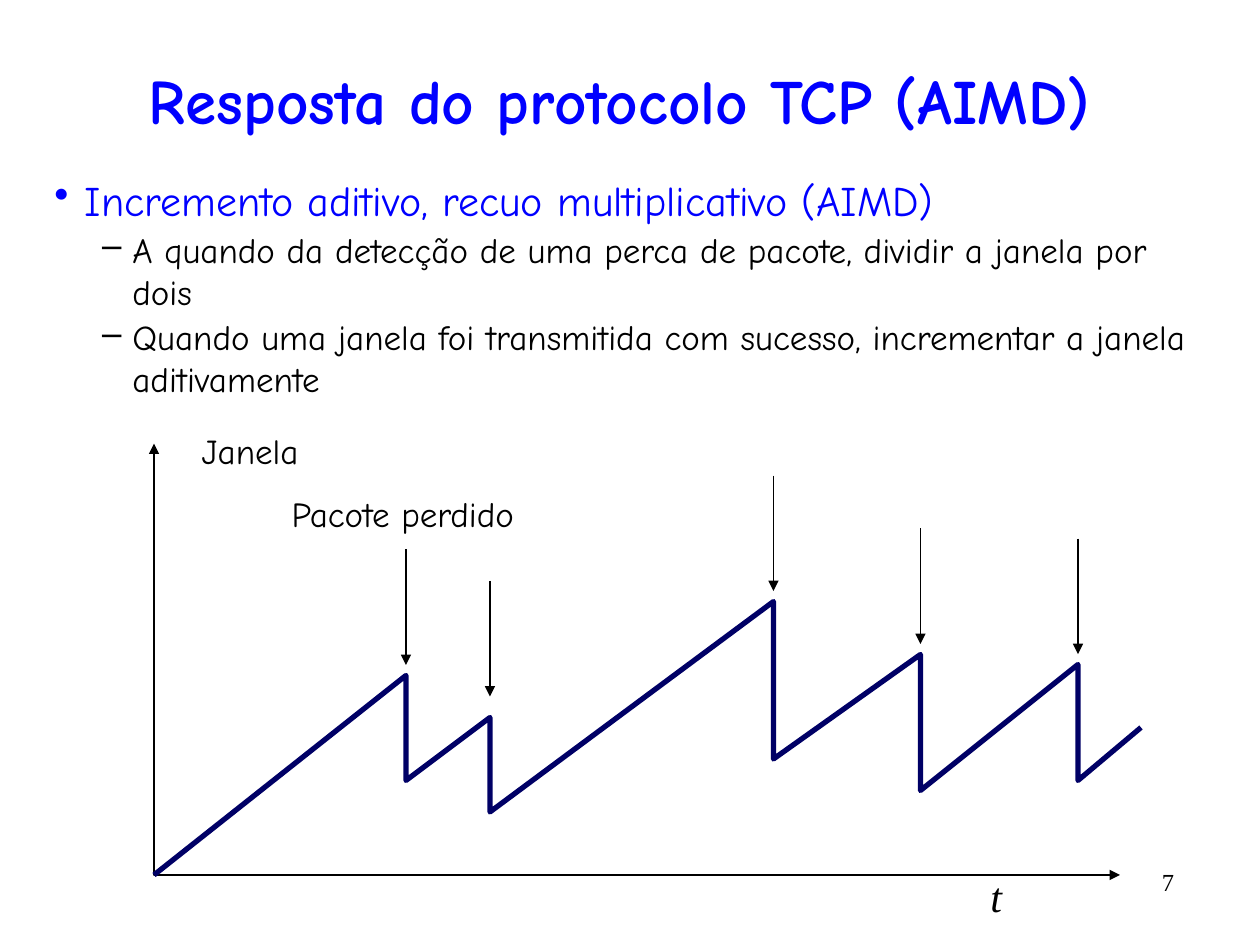
from dataclasses import dataclass

from lxml import etree
from pptx import Presentation
from pptx.dml.color import RGBColor
from pptx.enum.shapes import MSO_CONNECTOR
from pptx.enum.text import MSO_ANCHOR, MSO_AUTO_SIZE, PP_ALIGN
from pptx.oxml.ns import qn
from pptx.util import Pt

STRAIGHT = MSO_CONNECTOR.STRAIGHT
MIDDLE = MSO_ANCHOR.MIDDLE
NO_AUTOFIT = MSO_AUTO_SIZE.NONE
CENTER, RIGHT, LEFT = PP_ALIGN.CENTER, PP_ALIGN.RIGHT, PP_ALIGN.LEFT

BLUE = RGBColor(0x00, 0x00, 0xFF)
NAVY = RGBColor(0x00, 0x00, 0x66)
BLACK = RGBColor(0x00, 0x00, 0x00)

SANS = "Comic Neue"
SERIF = "Times New Roman"

TITLE_ONLY = 5
ARROW_LENGTH = 66


@dataclass(frozen=True)
class Style:
    size: float
    font: str = SANS
    color: RGBColor = BLACK
    bold: bool = False
    italic: bool = False


@dataclass(frozen=True)
class Box:
    left: float
    top: float
    width: float
    height: float

    def lengths(self) -> tuple:
        return Pt(self.left), Pt(self.top), Pt(self.width), Pt(self.height)


@dataclass(frozen=True)
class Label:
    text: str
    box: Box
    style: Style
    align: PP_ALIGN = CENTER
    wrap: bool = False


@dataclass(frozen=True)
class Bullet:
    text: str
    symbol: str
    style: Style
    level: int
    indent: float
    space_before: float


@dataclass(frozen=True)
class Point:
    x: float
    y: float


HEADING = Style(36, color=BLUE, bold=True)
TOPIC = Style(24, color=BLUE)
BODY = Style(20)

HANGING = 17.25
BULLETS = [
    Bullet("Incremento aditivo, recuo multiplicativo (AIMD)", "•", TOPIC, 0, HANGING, 0),
    Bullet("A quando da detecção de uma perca de pacote, dividir a janela por dois",
           "–", BODY, 1, 44.6, 2),
    Bullet("Quando uma janela foi transmitida com sucesso, incrementar a janela "
           "aditivamente", "–", BODY, 1, 44.6, 2),
]

LABELS = [
    Label("7", Box(606, 492, 72, 30), Style(14, SERIF), RIGHT, True),
    Label("t", Box(558.7, 494, 21, 36), Style(24, SERIF, italic=True)),
    Label("Pacote perdido", Box(152.7, 278, 155, 31.5), BODY),
    Label("Janela", Box(105.2, 242, 75.5, 31.5), BODY),
]

ORIGIN = Point(88, 500)
AXES = [Point(ORIGIN.x, 253.5), ORIGIN, Point(640, ORIGIN.y)]

# Each loss: the peak of the window, then the height it falls to
LOSSES = [
    (Point(232, 386), 446),
    (Point(280, 410), 464),
    (Point(442, 343.75), 433.75),
    (Point(526, 374), 451.75),
    (Point(616, 379.75), 446),
]
WINDOW_END = Point(652, 415.75)
ARROW_TOPS = [314, 332, 271.75, 302, 307.75]


def add_run(paragraph, text: str, style: Style) -> None:
    run = paragraph.add_run()
    run.text = text
    font = run.font
    font.name = style.font
    font.size = Pt(style.size)
    font.bold = style.bold
    font.italic = style.italic
    font.color.rgb = style.color


def add_label(slide, label: Label) -> None:
    shape = slide.shapes.add_textbox(*label.box.lengths())
    shape.text_frame.word_wrap = label.wrap
    paragraph = shape.text_frame.paragraphs[0]
    paragraph.alignment = label.align
    add_run(paragraph, label.text, label.style)


def add_bullets(slide, box: Box, bullets: list[Bullet]) -> None:
    frame = slide.shapes.add_textbox(*box.lengths()).text_frame
    frame.word_wrap = True
    for index, bullet in enumerate(bullets):
        paragraph = frame.add_paragraph() if index else frame.paragraphs[0]
        paragraph.alignment = LEFT
        paragraph.level = bullet.level
        paragraph.space_before = Pt(bullet.space_before)
        properties = paragraph._p.get_or_add_pPr()
        properties.set("marL", str(Pt(bullet.indent)))
        properties.set("indent", str(-Pt(HANGING)))
        etree.SubElement(properties, qn("a:buChar"), char=bullet.symbol)
        add_run(paragraph, bullet.text, bullet.style)


def style_line(shape, color: RGBColor, width: float, *arrow_ends: str) -> None:
    """Format the line; arrow_ends takes headEnd before tailEnd."""
    shape.line.color.rgb = color
    shape.line.width = Pt(width)
    line = shape.line._get_or_add_ln()
    for end in arrow_ends:
        etree.SubElement(line, qn(f"a:{end}"), type="triangle")


def add_polyline(slide, points: list[Point], color: RGBColor, width: float,
                 *arrow_ends: str) -> None:
    start, *others = [(Pt(point.x), Pt(point.y)) for point in points]
    builder = slide.shapes.build_freeform(*start)
    builder.add_line_segments(others, close=False)
    shape = builder.convert_to_shape()
    shape.shadow.inherit = False
    shape.fill.background()
    style_line(shape, color, width, *arrow_ends)


def add_down_arrow(slide, x: float, top: float) -> None:
    arrow = slide.shapes.add_connector(
        STRAIGHT, Pt(x), Pt(top), Pt(x), Pt(top + ARROW_LENGTH))
    style_line(arrow, BLACK, 0.75, "tailEnd")
    etree.SubElement(arrow._element.spPr, qn("a:effectLst"))


def set_title(slide, text: str, box: Box) -> None:
    title = slide.shapes.title
    title.left, title.top, title.width, title.height = box.lengths()
    frame = title.text_frame
    frame.auto_size = NO_AUTOFIT
    frame.vertical_anchor = MIDDLE
    paragraph = frame.paragraphs[0]
    paragraph.alignment = CENTER
    add_run(paragraph, text, HEADING)


def main() -> None:
    presentation = Presentation()
    presentation.slide_width = Pt(720)
    presentation.slide_height = Pt(540)
    slide = presentation.slides.add_slide(presentation.slide_layouts[TITLE_ONLY])

    set_title(slide, "Resposta do protocolo TCP (AIMD)", Box(24, 30, 660, 54))
    add_bullets(slide, Box(24, 96, 678, 151), BULLETS)

    add_polyline(slide, AXES, BLACK, 1.5, "headEnd", "tailEnd")
    window = [ORIGIN]
    for peak, floor in LOSSES:
        window += [peak, Point(peak.x, floor)]
    add_polyline(slide, window + [WINDOW_END], NAVY, 3)

    for (peak, _), top in zip(LOSSES, ARROW_TOPS):
        add_down_arrow(slide, peak.x, top)
    for label in LABELS:
        add_label(slide, label)

    presentation.save("out.pptx")


if __name__ == "__main__":
    main()
